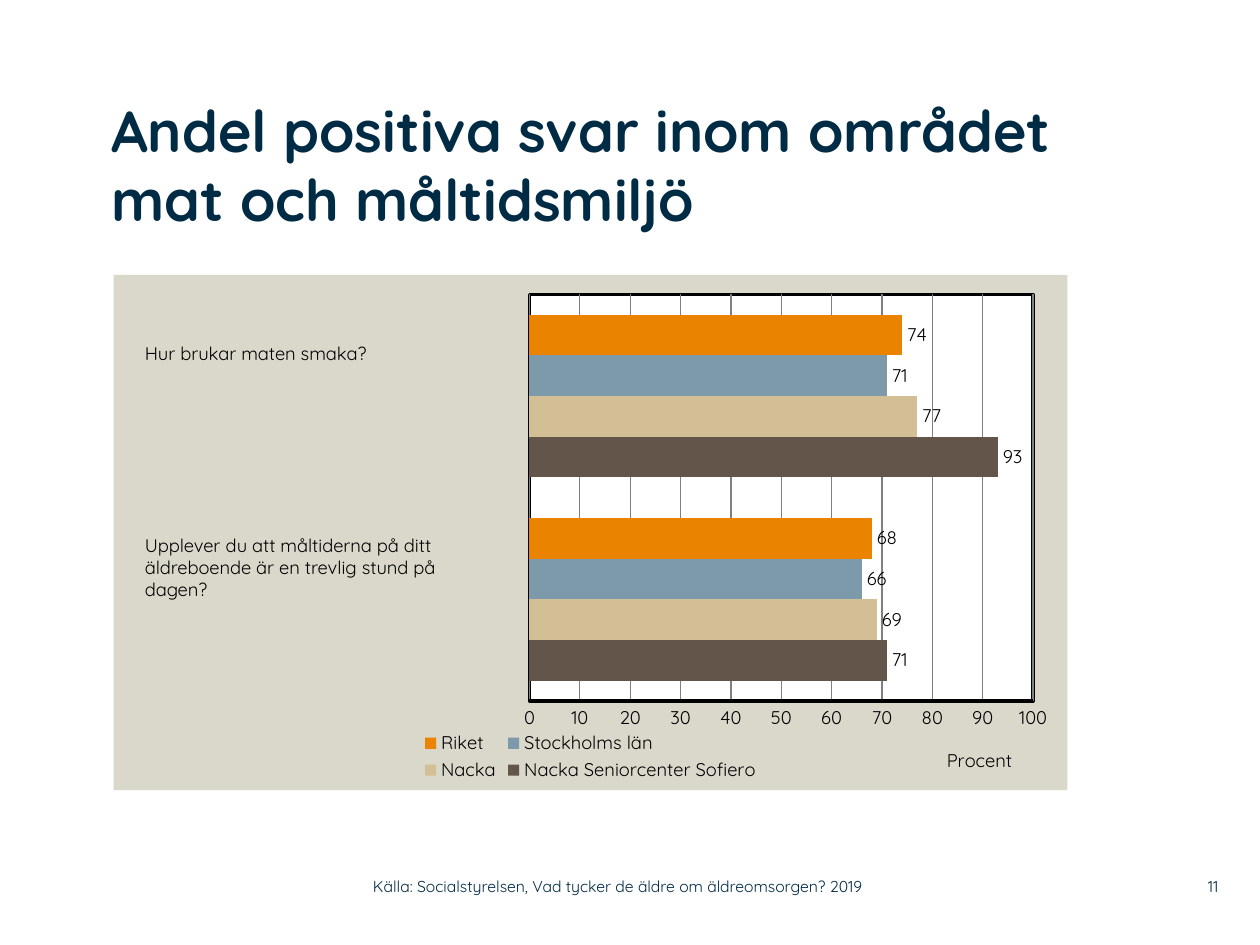
from lxml import etree
from pptx import Presentation
from pptx.chart.data import CategoryChartData
from pptx.dml.color import RGBColor
from pptx.enum.chart import XL_CHART_TYPE, XL_LABEL_POSITION, XL_LEGEND_POSITION, XL_TICK_MARK
from pptx.enum.text import MSO_ANCHOR, PP_ALIGN
from pptx.oxml import parse_xml
from pptx.oxml.ns import nsdecls, qn
from pptx.util import Cm, Pt

BAR = XL_CHART_TYPE.BAR_CLUSTERED
OUTSIDE = XL_LABEL_POSITION.OUTSIDE_END
BOTTOM = XL_LEGEND_POSITION.BOTTOM
NO_TICK = XL_TICK_MARK.NONE
TOP, MIDDLE = MSO_ANCHOR.TOP, MSO_ANCHOR.MIDDLE
LEFT, RIGHT = PP_ALIGN.LEFT, PP_ALIGN.RIGHT

FONT = "Quicksand"
NAVY, BLACK, WHITE, SAND, GREY = "002B45", "000000", "FFFFFF", "DAD7CB", "808080"


def color(hex_value):
    return RGBColor.from_string(hex_value)


def set_layout(parent, index, fractions, inner=False):
    """Give a chart part a manual place, as fractions of the chart's size."""
    for old in parent.findall(qn("c:layout")):
        parent.remove(old)
    layout = parse_xml(f"<c:layout {nsdecls('c')}><c:manualLayout/></c:layout>")
    values = [("layoutTarget", "inner")] if inner else []
    values += [("xMode", "edge"), ("yMode", "edge")]
    values += zip("xywh", fractions)
    for name, value in values:
        etree.SubElement(layout[0], qn(f"c:{name}")).set("val", str(value))
    parent.insert(index, layout)


deck = Presentation()
deck.slide_width, deck.slide_height = Cm(25.4), Cm(19.05)
page = deck.slides.add_slide(deck.slide_layouts[6])

# Chart: the first category and the first series lie lowest
data = CategoryChartData(number_format="0")
data.categories = ["1", "2"]
SERIES = [
    ("Nacka Seniorcenter Sofiero", (71, 93), "635549"),
    ("Nacka", (69, 77), "D3BF96"),
    ("Stockholms län", (66, 71), "7D9AAA"),
    ("Riket", (68, 74), "E98300"),
]
for name, values, _ in SERIES:
    data.add_series(name, values)
chart = page.shapes.add_chart(BAR, Cm(2.29), Cm(5.54), Cm(19.23), Cm(10.39), data).chart
chart.has_title = False
chart.font.name, chart.font.size = FONT, Pt(10.5)
chart.font.color.rgb = color(BLACK)

plot = chart.plots[0]
plot.gap_width, plot.overlap, plot.vary_by_categories = 100, 0, False
for series, (_, _, fill) in zip(plot.series, SERIES):
    series.format.fill.solid()
    series.format.fill.fore_color.rgb = color(fill)
plot.has_data_labels = True
labels = plot.data_labels
labels.show_value, labels.position = True, OUTSIDE
labels.font.name, labels.font.size = FONT, Pt(10.5)

chart.category_axis.visible = False
axis = chart.value_axis
axis_format = {
    "minimum_scale": 0,
    "maximum_scale": 100,
    "major_unit": 10,
    "major_tick_mark": NO_TICK,
    "minor_tick_mark": NO_TICK,
    "has_major_gridlines": True,
}
for name, value in axis_format.items():
    setattr(axis, name, value)
for line, hex_value, width in [
    (axis.format.line, BLACK, 2),
    (axis.major_gridlines.format.line, GREY, 0.75),
]:
    line.color.rgb, line.width = color(hex_value), Pt(width)
axis_text = axis.axis_title.text_frame
axis_text.text = "Procent"
title_font = axis_text.paragraphs[0].runs[0].font
title_font.name, title_font.size, title_font.bold = FONT, Pt(10.5), False
title_font.color.rgb = color(BLACK)

chart.has_legend = True
legend = chart.legend
legend.position, legend.include_in_layout = BOTTOM, False
legend.font.name, legend.font.size = FONT, Pt(10.5)

chart_part = chart.element.find(qn("c:chart"))
plot_area = chart_part.find(qn("c:plotArea"))
set_layout(plot_area, 0, (0.436, 0.038, 0.528, 0.789), inner=True)
set_layout(axis.axis_title.element if hasattr(axis.axis_title, "element")
           else plot_area.find(f"{qn('c:valAx')}/{qn('c:title')}"), 1, (0.87, 0.91))
set_layout(chart_part.find(qn("c:legend")), 1, (0.32, 0.88, 0.36, 0.11))

BORDER = f'<a:ln w="{Pt(2)}"><a:solidFill><a:srgbClr val="{BLACK}"/></a:solidFill></a:ln>'
NO_BORDER = "<a:ln><a:noFill/></a:ln>"
for previous, fill, border in [(plot_area[-1], WHITE, BORDER), (chart_part, SAND, NO_BORDER)]:
    previous.addnext(parse_xml(
        f'<c:spPr {nsdecls("c", "a")}><a:solidFill><a:srgbClr val="{fill}"/></a:solidFill>'
        f"{border}</c:spPr>"
    ))

# Text: place in cm, paragraphs, size, colour, bold, alignment, anchor, inset in cm
TEXTS = [
    ((2.24, 1.91, 21.39, 3.61), ["Andel positiva svar inom området mat och måltidsmiljö"],
     33, NAVY, True, LEFT, TOP, 0),
    ((2.67, 6.78, 7.54, 0.71), ["Hur brukar maten smaka?"],
     10.5, BLACK, False, LEFT, TOP, None),
    ((2.67, 10.64, 7.44, 1.6),
     ["Upplever du att måltiderna på ditt äldreboende är en trevlig stund på", "dagen?"],
     10.5, BLACK, False, LEFT, TOP, None),
    ((23.37, 17.5, 1.19, 0.74), ["11"], 9, NAVY, False, RIGHT, MIDDLE, 0),
    ((7.52, 17.5, 11.25, 0.74),
     ["Källa: Socialstyrelsen, Vad tycker de äldre om äldreomsorgen? 2019"],
     9, NAVY, False, LEFT, MIDDLE, 0),
]
for place, paragraphs, size, hex_value, bold, alignment, anchor, inset in TEXTS:
    frame = page.shapes.add_textbox(*map(Cm, place)).text_frame
    frame.word_wrap, frame.vertical_anchor = True, anchor
    if inset is not None:
        for side in ("left", "top", "right", "bottom"):
            setattr(frame, f"margin_{side}", Cm(inset))
    frame.text = "\n".join(paragraphs)
    for para in frame.paragraphs:
        para.alignment = alignment
        for span in para.runs:
            for name, value in {"name": FONT, "size": Pt(size), "bold": bold}.items():
                setattr(span.font, name, value)
            span.font.color.rgb = color(hex_value)

deck.save("out.pptx")
